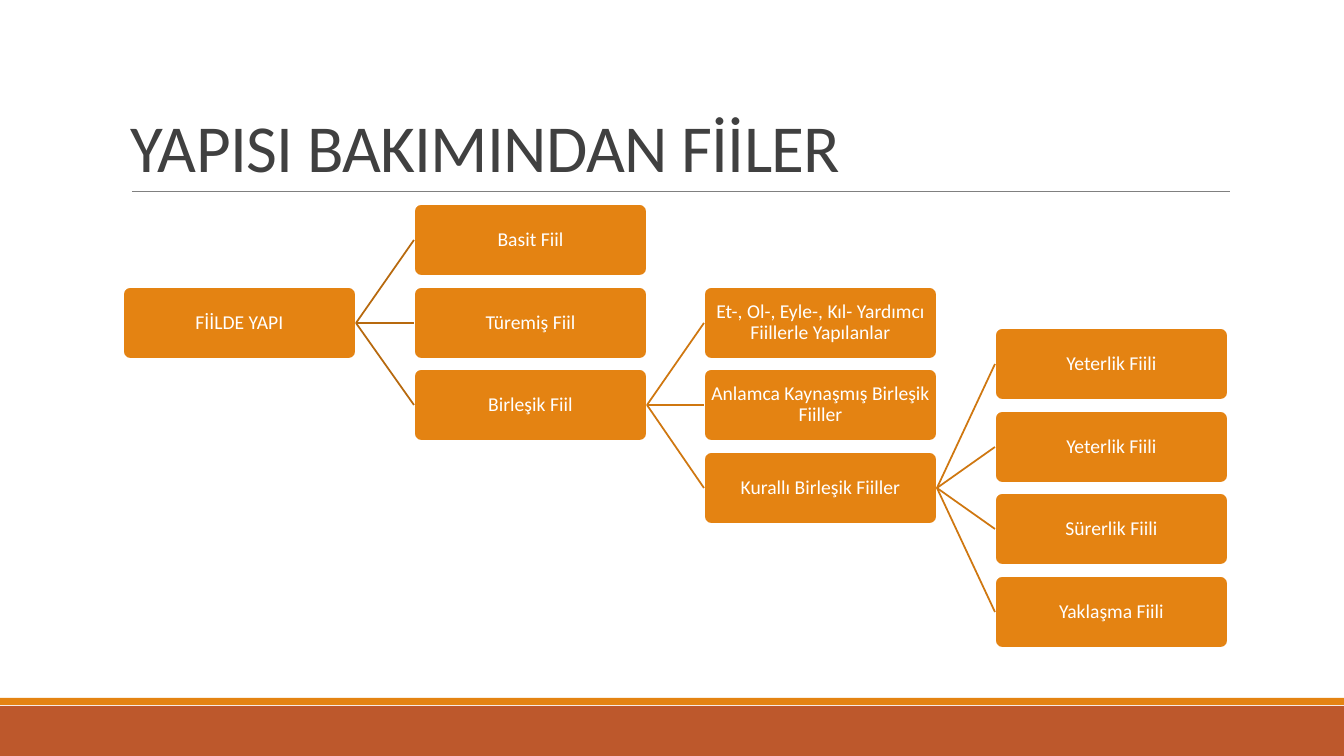
"""Builds a slide with a left-to-right tree of Turkish verb structures."""
from lxml import etree
from pptx import Presentation
from pptx.dml.color import RGBColor
from pptx.enum.shapes import MSO_CONNECTOR, MSO_SHAPE
from pptx.enum.text import MSO_ANCHOR, PP_ALIGN
from pptx.oxml.ns import qn
from pptx.util import Pt

RECTANGLE = MSO_SHAPE.RECTANGLE
ROUNDED = MSO_SHAPE.ROUNDED_RECTANGLE
STRAIGHT = MSO_CONNECTOR.STRAIGHT
MIDDLE, BOTTOM = MSO_ANCHOR.MIDDLE, MSO_ANCHOR.BOTTOM
LEFT, CENTER = PP_ALIGN.LEFT, PP_ALIGN.CENTER

SLIDE_WIDTH, SLIDE_HEIGHT = 1344, 756
EMU_PER_PX = 914400 / 100.8
FONT = "Calibri"
ORANGE, RUST, WHITE = "E48312", "BD582C", "FFFFFF"
DARK_GRAY, RULE_GRAY = "404040", "808080"
BRANCH_COLORS = ("B7690E", "CF7710", "CF7710")

TREE_LEFT, TREE_TOP = 123, 204
NODE_WIDTH, NODE_HEIGHT = 233, 72
COLUMN_STEP = 872 / 3
HALF_ROW = 124 / 3
ROOT_ROW = 2

VERB_TREE = ("FİİLDE YAPI", [
    ("Basit Fiil", []),
    ("Türemiş Fiil", []),
    ("Birleşik Fiil", [
        ("Et-, Ol-, Eyle-, Kıl- Yardımcı Fiillerle Yapılanlar", []),
        ("Anlamca Kaynaşmış Birleşik Fiiller", []),
        ("Kurallı Birleşik Fiiller", [
            ("Yeterlik Fiili", []),
            ("Yeterlik Fiili", []),
            ("Sürerlik Fiili", []),
            ("Yaklaşma Fiili", []),
        ]),
    ]),
])


def px(length):
    """Turn pixels into EMU."""
    return round(length * EMU_PER_PX)


def color(hex_string):
    """Turn a hex string into a colour."""
    return RGBColor.from_string(hex_string)


def write_text(shape, text, size, hex_string, alignment, anchor, spacing):
    """Write one formatted paragraph into a shape and return its run."""
    frame = shape.text_frame
    frame.word_wrap = True
    frame.vertical_anchor = anchor
    frame.text = text
    paragraph = frame.paragraphs[0]
    paragraph.alignment = alignment
    paragraph.line_spacing = spacing
    run = paragraph.runs[0]
    run.font.name = FONT
    run.font.size = Pt(size)
    run.font.color.rgb = color(hex_string)
    return run


def add_block(slide, kind, left, top, width, height, fill):
    """Add a filled shape without outline or shadow."""
    shape = slide.shapes.add_shape(kind, px(left), px(top), px(width), px(height))
    shape.shadow.inherit = False
    shape.fill.solid()
    shape.fill.fore_color.rgb = color(fill)
    shape.line.fill.background()
    return shape


def add_line(slide, start, end, hex_string, width):
    """Add a straight line between two points."""
    line = slide.shapes.add_connector(
        STRAIGHT, px(start[0]), px(start[1]), px(end[0]), px(end[1]))
    line.line.color.rgb = color(hex_string)
    line.line.width = Pt(width)
    etree.SubElement(line._element.spPr, qn("a:effectLst"))


def add_title(slide, text):
    """Add the slide title."""
    title = slide.shapes.add_textbox(px(121), px(31), px(1109), px(160))
    run = write_text(title, text, 48, DARK_GRAY, LEFT, BOTTOM, 0.85)
    run._r.get_or_add_rPr().set("spc", "-50")


def add_node(slide, text, left, top):
    """Add one labelled box of the tree."""
    node = add_block(slide, ROUNDED, left, top, NODE_WIDTH, NODE_HEIGHT, ORANGE)
    node.adjustments[0] = 0.1
    node.line.color.rgb = color(WHITE)
    node.line.width = Pt(1.25)
    frame = node.text_frame
    frame.margin_left = frame.margin_right = px(1)
    frame.margin_top = frame.margin_bottom = px(1)
    write_text(node, text, 14, WHITE, CENTER, MIDDLE, 0.9)


def add_branch(slide, tree, depth, row):
    """Draw a node with its children centred on it, and return its left middle."""
    text, children = tree
    left = TREE_LEFT + round(depth * COLUMN_STEP)
    top = TREE_TOP + round(row * HALF_ROW)
    middle = top + NODE_HEIGHT // 2
    add_node(slide, text, left, top)
    first_row = row - len(children) + 1
    for index, child in enumerate(children):
        end = add_branch(slide, child, depth + 1, first_row + 2 * index)
        add_line(slide, (left + NODE_WIDTH, middle), end, BRANCH_COLORS[depth], 1.25)
    return left, middle


def main():
    """Build and save the slide."""
    presentation = Presentation()
    presentation.slide_width = px(SLIDE_WIDTH)
    presentation.slide_height = px(SLIDE_HEIGHT)
    slide = presentation.slides.add_slide(presentation.slide_layouts[6])
    add_block(slide, RECTANGLE, 0, 706, SLIDE_WIDTH, 50, RUST)
    add_block(slide, RECTANGLE, 0, 698, SLIDE_WIDTH, 7, ORANGE)
    add_line(slide, (132, 191), (1230, 191), RULE_GRAY, 0.5)
    add_title(slide, "YAPISI BAKIMINDAN FİİLER")
    add_branch(slide, VERB_TREE, 0, ROOT_ROW)
    presentation.save("out.pptx")


if __name__ == "__main__":
    main()
